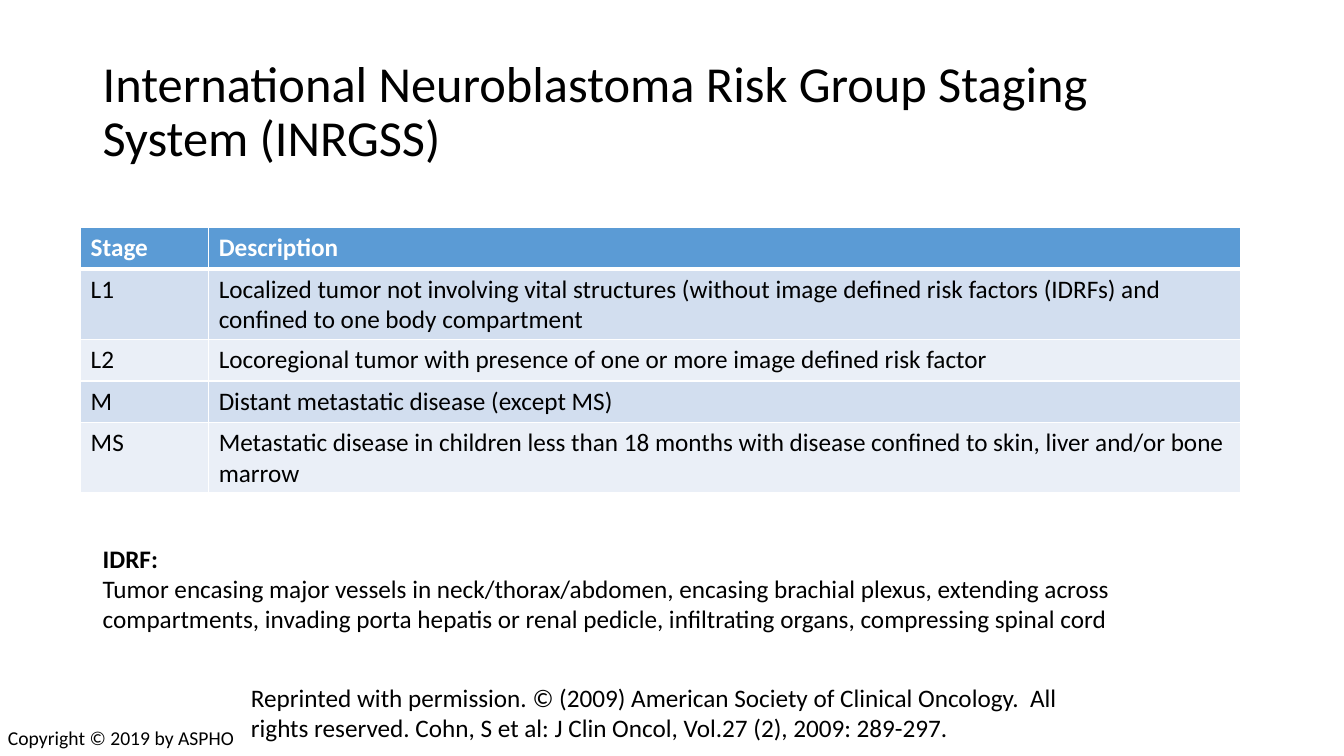
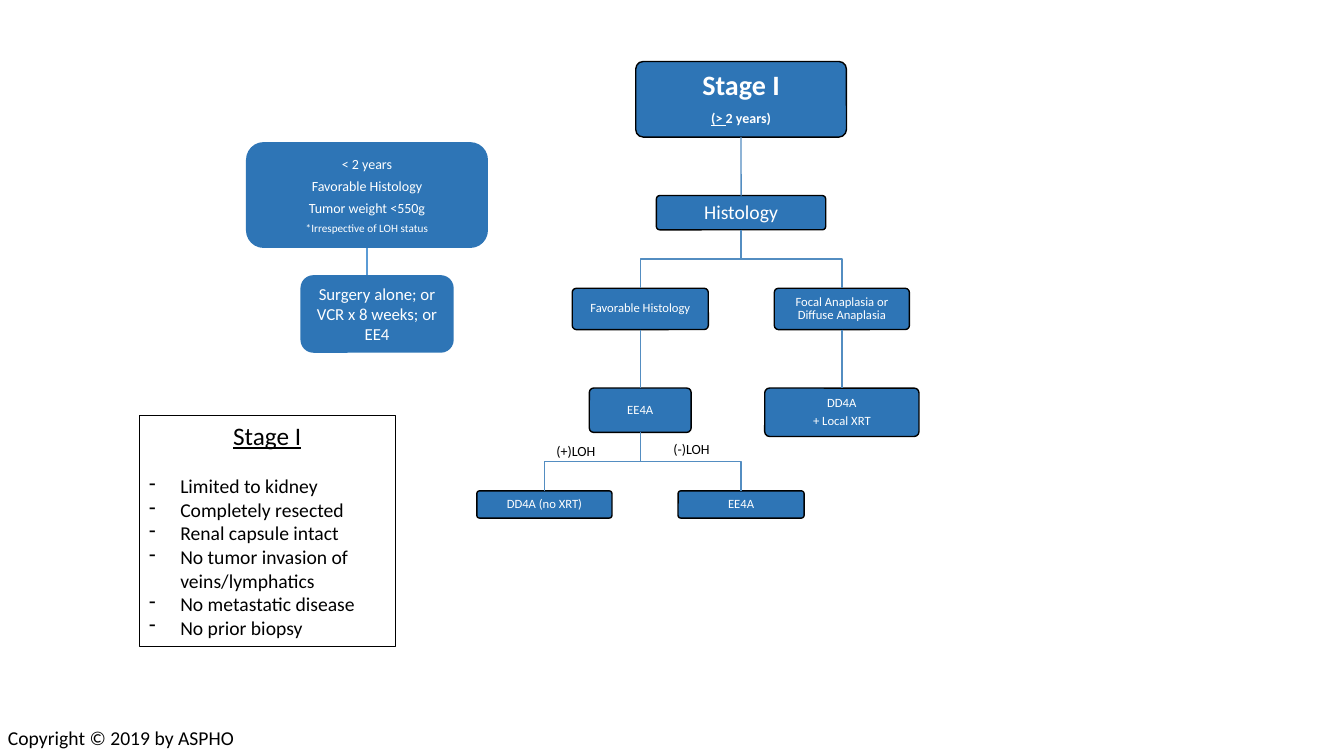
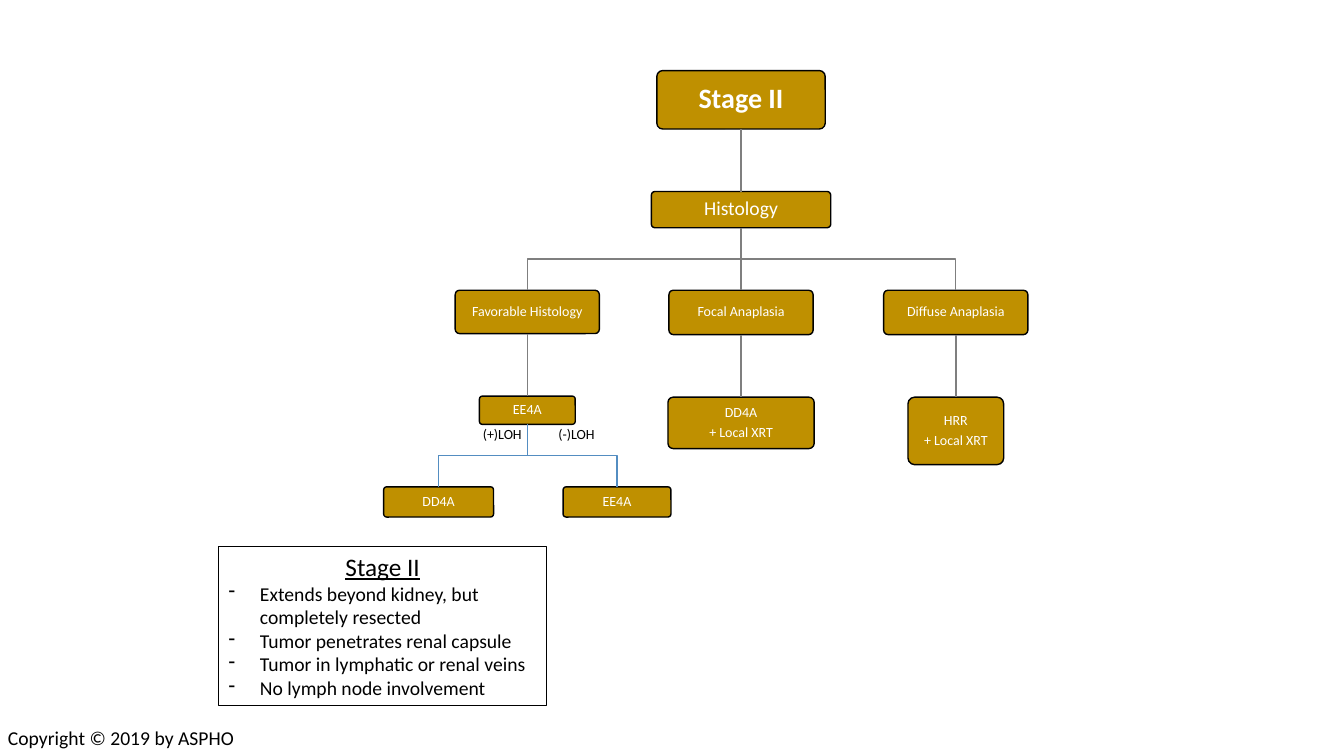
import lxml.etree
import pptx
import pptx.dml.color
import pptx.enum.shapes
import pptx.enum.text
import pptx.oxml.ns
import pptx.util
from dataclasses import dataclass

Inches, Pt = pptx.util.Inches, pptx.util.Pt
SHAPE = pptx.enum.shapes.MSO_SHAPE
CONNECTOR = pptx.enum.shapes.MSO_CONNECTOR
ANCHOR = pptx.enum.text.MSO_ANCHOR
CENTER = pptx.enum.text.PP_ALIGN.CENTER
FONT = "Calibri"
COLORS = {
    "text": "000000", "white": "FFFFFF", "header": "5B9BD5",
    "band": "D2DEEF", "band_light": "EAEFF7", "blue": "2E75B6",
    "gold": "BF9000", "blue_line": "538DC1", "gray_line": "7F7F7F",
}


@dataclass
class Node:
    """A box of a decision tree, centred on cx, with the boxes below it."""
    lines: list
    cx: float
    w: float
    h: float
    size: float
    children: tuple = ()
    margin: float = 0.05
    bold: bool = False
    branch: str = ""


def rgb(name):
    """Return the named colour."""
    return pptx.dml.color.RGBColor.from_string(COLORS[name])


def sub(parent, tag, **attrs):
    """Append a drawing element with attributes."""
    el = lxml.etree.SubElement(parent, pptx.oxml.ns.qn(tag))
    for key, value in attrs.items():
        el.set(key, str(value))
    return el


def write(p, text, size, color="text", bold=False, align=None, spacing=None, after=0):
    """Fill a paragraph with a string, or with (string, underlined) runs."""
    for part, underline in [(text, False)] if isinstance(text, str) else text:
        r = p.add_run()
        r.text = part
        if underline:
            r.font.underline = True
    p.font.name, p.font.size, p.font.bold = FONT, Pt(size), bold
    p.font.color.rgb = rgb(color)
    if align is not None:
        p.alignment = align
    if spacing:
        p.line_spacing = spacing
    if after:
        p.space_after = Pt(after)


def paragraph(tf, i):
    """Return the first paragraph of a frame, or a new one."""
    return tf.add_paragraph() if i else tf.paragraphs[0]


def add_text(s, box, lines, size, anchor=ANCHOR.TOP, spacing=None):
    """Add a wrapped text box from (text, bold) lines."""
    tf = s.shapes.add_textbox(*map(Inches, box)).text_frame
    tf.word_wrap, tf.vertical_anchor = True, anchor
    for i, (text, bold) in enumerate(lines):
        write(paragraph(tf, i), text, size, bold=bold, spacing=spacing)


def add_footer(s):
    """Add the copyright line at the bottom left."""
    add_text(s, (-0.02, 7.15, 3.4, 0.34), [("Copyright © 2019 by ASPHO", False)], 14)


def add_box(s, box, lines, fill, margin, outline=None, adj=None, spacing=None):
    """Add a rounded box with centred white (text, size, bold) lines."""
    sp = s.shapes.add_shape(SHAPE.ROUNDED_RECTANGLE, *map(Inches, box))
    sp.shadow.inherit = False
    sp.fill.solid()
    sp.fill.fore_color.rgb = rgb(fill)
    if outline:
        sp.line.color.rgb, sp.line.width = rgb(outline), Pt(1)
    else:
        sp.line.fill.background()
    if adj:
        sp.adjustments[0] = adj
    tf = sp.text_frame
    tf.word_wrap, tf.vertical_anchor = True, ANCHOR.MIDDLE
    tf.margin_left = tf.margin_right = tf.margin_top = tf.margin_bottom = Inches(margin)
    for i, (text, size, bold) in enumerate(lines):
        write(paragraph(tf, i), text, size, "white", bold, CENTER, spacing, 0.35 * size)
    return sp


def add_line(s, start, end, color, begin, finish=None):
    """Add a straight line down from the bottom of one box."""
    line = s.shapes.add_connector(CONNECTOR.STRAIGHT, *map(Inches, start + end))
    line.line.color.rgb, line.line.width = rgb(color), Pt(1)
    sub(line._element.spPr, "a:effectLst")
    line.begin_connect(begin, 2)
    if finish is not None:
        line.end_connect(finish, 0)


def add_elbow(s, start, end, color):
    """Add a bent line that turns halfway down."""
    (x1, y1), (x2, y2) = start, end
    mid = (y1 + y2) / 2
    builder = s.shapes.build_freeform(Inches(x1), Inches(y1))
    points = [(x1, mid), (x2, mid), (x2, y2)]
    builder.add_line_segments([(Inches(x), Inches(y)) for x, y in points], close=False)
    sp = builder.convert_to_shape()
    sp.shadow.inherit = False
    sp.fill.background()
    sp.line.color.rgb, sp.line.width = rgb(color), Pt(1)


def add_tree(s, node, top, gap, fill, line):
    """Add a node and its children below it, joined by lines."""
    lines = [t if isinstance(t, tuple) else (t, node.size, node.bold) for t in node.lines]
    sp = add_box(s, (node.cx - node.w / 2, top, node.w, node.h), lines, fill,
                 node.margin, "text", 0.1, 0.9)
    bottom = top + node.h
    for child in node.children:
        child_sp = add_tree(s, child, bottom + gap, gap, fill, line)
        start, end = (node.cx, bottom), (child.cx, bottom + gap)
        color = child.branch or line
        if child.cx == node.cx:
            add_line(s, start, end, color, sp, child_sp)
        else:
            add_elbow(s, start, end, color)
    return sp


def add_branch_labels(s, places):
    """Label the two branches by LOH status."""
    for text, (x, y) in zip(("(+)LOH", "(-)LOH"), places):
        add_text(s, (x, y, 0.75, 0.27), [(text, False)], 10)


def add_criteria(s, box, title, items, width, after=0):
    """Add a framed list of staging criteria."""
    sp = s.shapes.add_shape(SHAPE.RECTANGLE, *map(Inches, box))
    sp.shadow.inherit = False
    sp.fill.background()
    sp.line.color.rgb, sp.line.width = rgb("text"), Pt(width)
    tf = sp.text_frame
    tf.word_wrap, tf.vertical_anchor = True, ANCHOR.TOP
    write(tf.paragraphs[0], [(title, True)], 18, align=CENTER, after=after)
    for item in items:
        p = tf.add_paragraph()
        pPr = p._p.get_or_add_pPr()
        pPr.set("marL", str(Inches(0.31)))
        pPr.set("indent", str(-Inches(0.31)))
        sub(pPr, "a:buChar", char="-")
        write(p, item, 14, align=pptx.enum.text.PP_ALIGN.LEFT)


def add_borders(cell, bottom):
    """Draw white cell borders, with the bottom width given in points."""
    tcPr = cell._tc.get_or_add_tcPr()
    for side, width in (("L", 1), ("R", 1), ("T", 1), ("B", bottom)):
        ln = sub(tcPr, "a:ln" + side, w=Pt(width))
        sub(sub(ln, "a:solidFill"), "a:srgbClr", val=COLORS["white"])


def add_stage_table(s, left, top, widths, row_height, rows):
    """Add the banded table of stages."""
    table = s.shapes.add_table(len(rows), len(widths), Inches(left), Inches(top),
                               Inches(sum(widths)), Inches(row_height * len(rows))).table
    for column, width in zip(table.columns, widths):
        column.width = Inches(width)
    for i, row in enumerate(rows):
        head = i == 0
        fill = "header" if head else ("band_light", "band")[i % 2]
        for j, text in enumerate(row):
            cell = table.cell(i, j)
            add_borders(cell, 3 if head else 1)
            cell.fill.solid()
            cell.fill.fore_color.rgb = rgb(fill)
            write(cell.text_frame.paragraphs[0], text, 18, "white" if head else "text", head)


def build_staging(s):
    """Build the staging system slide."""
    add_text(s, (0.92, 0.4, 11.5, 1.45),
             [("International Neuroblastoma Risk Group Staging System (INRGSS)", False)],
             36, ANCHOR.MIDDLE, 0.9)
    add_stage_table(s, 0.8, 2.26, (1.27, 10.23), 0.41, [
        ("Stage", "Description"),
        ("L1", "Localized tumor not involving vital structures (without image defined "
               "risk factors (IDRFs) and confined to one body compartment"),
        ("L2", "Locoregional tumor with presence of one or more image defined risk factor"),
        ("M", "Distant metastatic disease (except MS)"),
        ("MS", "Metastatic disease in children less than 18 months with disease confined "
               "to skin, liver and/or bone marrow"),
    ])
    add_text(s, (0.92, 5.34, 11.38, 1.01), [
        ("IDRF:", True),
        ("Tumor encasing major vessels in neck/thorax/abdomen, encasing brachial plexus, "
         "extending across compartments, invading porta hepatis or renal pedicle, "
         "infiltrating organs, compressing spinal cord", False),
    ], 18)
    add_text(s, (2.39, 6.72, 8.44, 0.71), [
        ("Reprinted with permission. © (2009) American Society of Clinical Oncology.  All "
         "rights reserved. Cohn, S et al: J Clin Oncol, Vol.27 (2), 2009: 289-297.", False),
    ], 18)


def build_stage_one(s):
    """Build the Stage I treatment slide."""
    ee4a = Node(["EE4A"], 6.35, 1.01, 0.44, 9, (
        Node(["DD4A (no XRT)"], 5.4, 1.34, 0.27, 9),
        Node(["EE4A"], 7.35, 1.25, 0.27, 9)))
    dd4a = Node(["DD4A", "+ Local XRT"], 8.35, 1.53, 0.48, 9)
    histology = Node(["Histology"], 7.35, 1.68, 0.34, 14, (
        Node(["Favorable Histology"], 6.35, 1.35, 0.41, 9, (ee4a,)),
        Node(["Focal Anaplasia or Diffuse Anaplasia"], 8.35, 1.34, 0.41, 9, (dd4a,))))
    age = ([("(> ", True), ("2 years)", False)], 10, True)
    root = Node(["Stage I", age], 7.35, 2.09, 0.75, 20, (histology,), 0.09, True)
    add_tree(s, root, 0.61, 0.58, "blue", "blue_line")
    add_branch_labels(s, [(5.42, 4.34), (6.58, 4.32)])
    young = add_box(s, (2.44, 1.41, 2.4, 1.05), [
        ("< 2 years", 10, False), ("Favorable Histology", 10, False),
        ("Tumor weight <550g", 10, False), ("*Irrespective of LOH status", 8, False),
    ], "blue", 0.01)
    add_box(s, (2.98, 2.73, 1.52, 0.77),
            [("Surgery alone; or VCR x 8 weeks; or EE4", 12, False)], "blue", 0.08)
    add_line(s, (3.64, 2.46), (3.64, 2.73), "header", young)
    add_criteria(s, (1.38, 4.12, 2.54, 2.29), "Stage I", [
        "Limited to kidney", "Completely resected", "Renal capsule intact",
        "No tumor invasion of veins/lymphatics", "No metastatic disease", "No prior biopsy",
    ], 0.25, 17)


def build_stage_two(s):
    """Build the Stage II treatment slide."""
    ee4a = Node(["EE4A"], 5.23, 0.95, 0.28, 10, (
        Node(["DD4A"], 4.35, 1.09, 0.3, 10, branch="blue_line"),
        Node(["EE4A"], 6.12, 1.07, 0.3, 10, branch="blue_line")))
    dd4a = Node(["DD4A", "+ Local XRT"], 7.35, 1.45, 0.51, 10)
    hrr = Node(["HRR", "+ Local XRT"], 9.48, 0.95, 0.67, 10)
    histology = Node(["Histology"], 7.35, 1.78, 0.36, 14, (
        Node(["Favorable Histology"], 5.23, 1.43, 0.43, 10, (ee4a,)),
        Node(["Focal Anaplasia"], 7.35, 1.43, 0.44, 10, (dd4a,)),
        Node(["Diffuse Anaplasia"], 9.48, 1.43, 0.44, 10, (hrr,))))
    root = Node(["Stage II"], 7.35, 1.67, 0.58, 20, (histology,), 0.09, True)
    add_tree(s, root, 0.7, 0.62, "gold", "gray_line")
    add_branch_labels(s, [(4.69, 4.17), (5.44, 4.17)])
    add_criteria(s, (2.17, 5.42, 3.25, 1.58), "Stage II", [
        "Extends beyond kidney, but completely resected", "Tumor penetrates renal capsule",
        "Tumor in lymphatic or renal veins", "No lymph node involvement",
    ], 0.75)


def main():
    """Build and save the presentation."""
    prs = pptx.Presentation()
    prs.slide_width, prs.slide_height = Inches(13.33), Inches(7.5)
    for build in (build_staging, build_stage_one, build_stage_two):
        s = prs.slides.add_slide(prs.slide_layouts[6])
        build(s)
        add_footer(s)
    prs.save("out.pptx")


if __name__ == "__main__":
    main()
